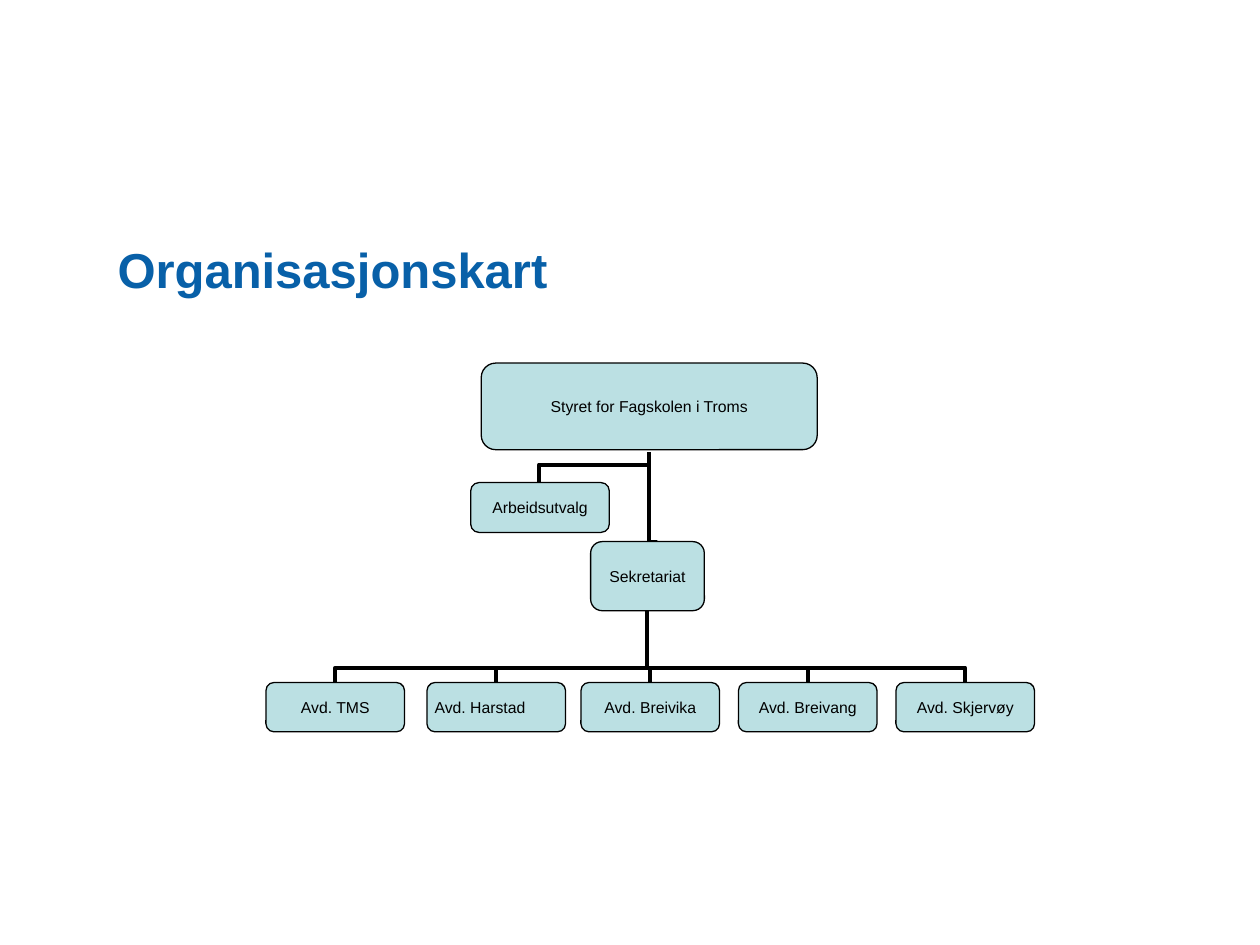
from dataclasses import dataclass
from lxml.etree import SubElement
from pptx import Presentation
from pptx.dml.color import RGBColor
from pptx.enum.shapes import MSO_CONNECTOR, MSO_SHAPE
from pptx.enum.text import MSO_ANCHOR, PP_ALIGN
from pptx.oxml.ns import qn
from pptx.util import Pt


@dataclass(frozen=True)
class Theme:
    font: str = "Arial"
    blue: RGBColor = RGBColor(0x08, 0x60, 0xA8)
    fill: RGBColor = RGBColor(0xBB, 0xE0, 0xE3)
    black: RGBColor = RGBColor(0, 0, 0)
    title_size: float = 28
    box_size: float = 9
    outline: float = 0.75
    link: float = 2.25


THEME = Theme()
BOARD = (275, 207.5, 192, 49.5)
SECRETARIAT = (337.5, 309.5, 65, 39.5)
COMMITTEE = (269, 275.75, 79.2, 28.5)
DEPT_TOP, DEPT_W, DEPT_H = 390, 79.2, 28.2
DEPARTMENTS = [
    ("Avd. TMS", 152, PP_ALIGN.CENTER),
    ("Avd. Harstad", 244, PP_ALIGN.LEFT),
    ("Avd. Breivika", 332, PP_ALIGN.CENTER),
    ("Avd. Breivang", 422, PP_ALIGN.CENTER),
    ("Avd. Skjervøy", 512, PP_ALIGN.CENTER),
]


def apply(obj, values):
    for name, value in values.items():
        setattr(obj, name, value)


def write(s, text, size, color, bold, align, margins):
    tf = s.text_frame
    apply(tf, {"word_wrap": True, "vertical_anchor": MSO_ANCHOR.MIDDLE})
    apply(tf, dict(zip(("margin_left", "margin_top", "margin_right", "margin_bottom"),
                       map(Pt, margins))))
    p = tf.paragraphs[0]
    p.alignment = align
    r = p.add_run()
    r.text = text
    apply(r.font, {"name": THEME.font, "size": Pt(size), "bold": bold})
    r.font.color.rgb = color


def add_title(slide, text):
    s = slide.shapes.title
    apply(s, {"left": Pt(60), "top": Pt(117), "width": Pt(624), "height": Pt(73)})
    write(s, text, THEME.title_size, THEME.blue, True, PP_ALIGN.LEFT, (7.2, 3.6, 7.2, 3.6))


def add_box(slide, text, rect, align=PP_ALIGN.CENTER):
    s = slide.shapes.add_shape(MSO_SHAPE.ROUNDED_RECTANGLE, *map(Pt, rect))
    s.shadow.inherit = False
    s.fill.solid()
    s.fill.fore_color.rgb = THEME.fill
    s.line.color.rgb = THEME.black
    s.line.width = Pt(THEME.outline)
    write(s, text, THEME.box_size, THEME.black, False, align, (3, 1.5, 3, 1.5))


def add_elbow(slide, child, parent, bend_y):
    (x1, y1), (x2, y2) = child, parent
    rise, run = y1 - y2, abs(x2 - x1)
    left, top = (x1 + x2 - rise) / 2, (y1 + y2 - run) / 2
    c = slide.shapes.add_connector(
        MSO_CONNECTOR.ELBOW, Pt(left), Pt(top), Pt(left + rise), Pt(top + run))
    c.line.color.rgb = THEME.black
    c.line.width = Pt(THEME.link)
    sp_pr = c._element.spPr
    xfrm = sp_pr.find(qn("a:xfrm"))
    if x1 > x2:
        apply_xml = {"rot": "5400000", "flipH": "1"}
    else:
        apply_xml = {"rot": "16200000"}
    for name, value in apply_xml.items():
        xfrm.set(name, value)
    guides = sp_pr.find(qn("a:prstGeom")).get_or_add_avLst()
    bend = round((y1 - bend_y) / rise * 100000)
    SubElement(guides, qn("a:gd"), name="adj1", fmla=f"val {bend}")
    SubElement(sp_pr, qn("a:effectLst"))


def main():
    prs = Presentation()
    apply(prs, {"slide_width": Pt(720), "slide_height": Pt(540)})
    slide = prs.slides.add_slide(prs.slide_layouts[5])
    add_title(slide, "Organisasjonskart")

    board_foot = (371, 258.5)
    secretariat_foot = (369.5, 349)
    add_elbow(slide, (308, COMMITTEE[1]), board_foot, 265.5)
    add_elbow(slide, (375, 319), board_foot, 309.5)
    for _, left, _ in DEPARTMENTS:
        add_elbow(slide, (left + DEPT_W / 2, DEPT_TOP), secretariat_foot, 381.5)

    add_box(slide, "Styret for Fagskolen i Troms", BOARD)
    add_box(slide, "Sekretariat", SECRETARIAT)
    add_box(slide, "Arbeidsutvalg", COMMITTEE)
    for text, left, align in DEPARTMENTS:
        add_box(slide, text, (left, DEPT_TOP, DEPT_W, DEPT_H), align)
    prs.save("out.pptx")


if __name__ == "__main__":
    main()
